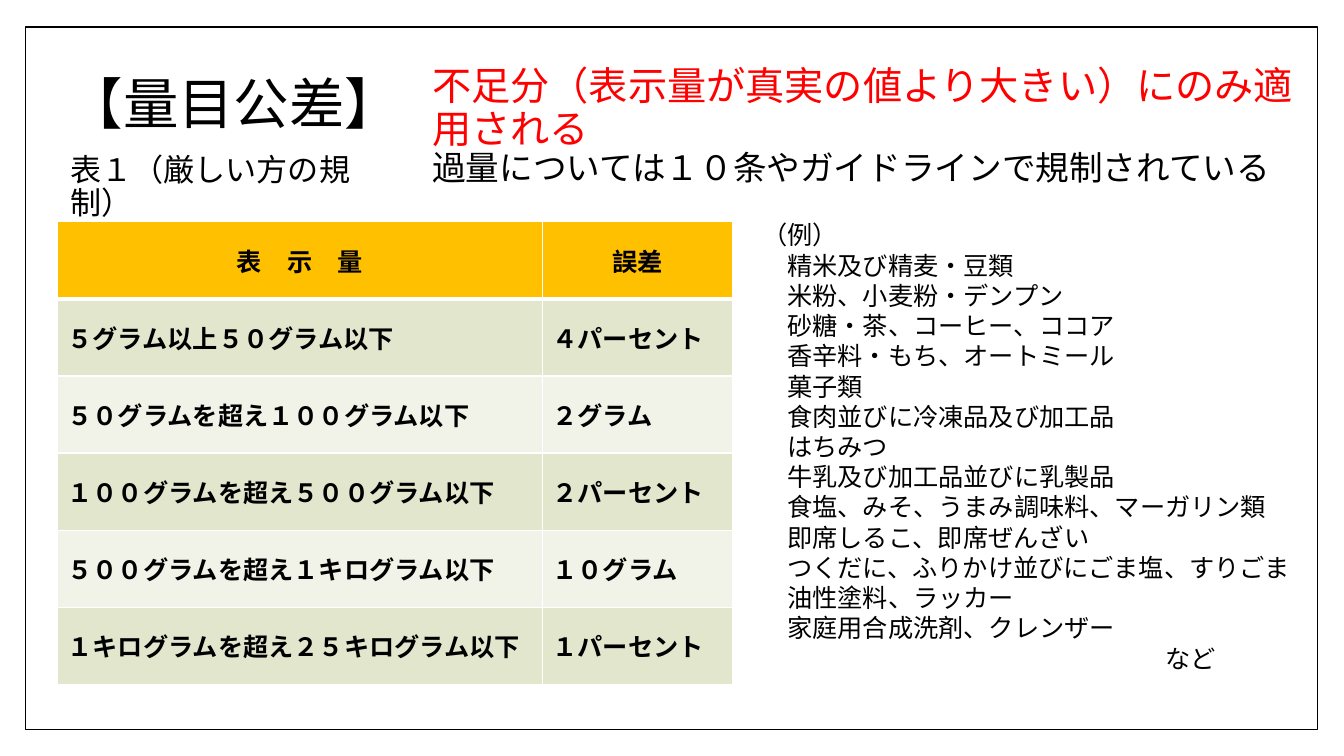
from dataclasses import dataclass

from lxml.etree import SubElement
from pptx import Presentation
from pptx.dml.color import RGBColor
from pptx.enum.shapes import MSO_SHAPE
from pptx.enum.text import MSO_ANCHOR, MSO_AUTO_SIZE, PP_ALIGN
from pptx.oxml.ns import qn
from pptx.util import Inches, Pt


@dataclass(frozen=True)
class Theme:
    font: str = "Calibri"
    black: str = "000000"
    white: str = "FFFFFF"
    red: str = "FF0000"
    gold: str = "FFC000"
    bands: tuple = ("E1E6CD", "F1F3E8")
    title: float = 39.6
    lead: float = 28
    note: float = 24
    label: float = 22.2
    body: float = 18


THEME = Theme()

LIMITS = [
    ("表　示　量", "誤差"),
    ("５グラム以上５０グラム以下", "４パーセント"),
    ("５０グラムを超え１００グラム以下", "２グラム"),
    ("１００グラムを超え５００グラム以下", "２パーセント"),
    ("５００グラムを超え１キログラム以下", "１０グラム"),
    ("１キログラムを超え２５キログラム以下", "１パーセント"),
]

GOODS = [
    "精米及び精麦・豆類",
    "米粉、小麦粉・デンプン",
    "砂糖・茶、コーヒー、ココア",
    "香辛料・もち、オートミール",
    "菓子類",
    "食肉並びに冷凍品及び加工品",
    "はちみつ",
    "牛乳及び加工品並びに乳製品",
    "食塩、みそ、うまみ調味料、マーガリン類",
    "即席しるこ、即席ぜんざい",
    "つくだに、ふりかけ並びにごま塩、すりごま",
    "油性塗料、ラッカー",
    "家庭用合成洗剤、クレンザー",
]


def color(code):
    return RGBColor.from_string(code)


def write(frame, text, size=THEME.body, ink=THEME.black, bold=False,
          align=PP_ALIGN.LEFT, space=None, indent=0):
    """Fill the first paragraph if it is empty, else append one."""
    para = frame.paragraphs[-1]
    if para.runs:
        para = frame.add_paragraph()
    para.alignment = align
    if space:
        para.line_spacing = space
    if indent:
        props = para._p.get_or_add_pPr()
        props.set("marL", str(Inches(indent)))
        props.set("indent", "0")
    run = para.add_run()
    run.text = text
    font = run.font
    font.name, font.size, font.bold = THEME.font, Pt(size), bold
    font.color.rgb = color(ink)


def add_box(slide, left, top, width, height, anchor=MSO_ANCHOR.MIDDLE):
    box = slide.shapes.add_textbox(
        Inches(left), Inches(top), Inches(width), Inches(height))
    frame = box.text_frame
    frame.word_wrap = True
    frame.vertical_anchor = anchor
    return frame


def add_border(slide):
    rect = slide.shapes.add_shape(
        MSO_SHAPE.RECTANGLE, Inches(0.25), Inches(0.27), Inches(12.82), Inches(6.97))
    rect.shadow.inherit = False
    rect.fill.solid()
    rect.fill.fore_color.rgb = color(THEME.white)
    rect.line.color.rgb = color(THEME.black)
    rect.line.width = Pt(1)
    # Send behind the title
    slide.shapes._spTree.insert(2, rect._element)


def set_title(slide, text):
    title = slide.shapes.title
    title.left, title.top = Inches(0.57), Inches(0.64)
    title.width, title.height = Inches(3.61), Inches(0.83)
    frame = title.text_frame
    frame.auto_size = MSO_AUTO_SIZE.NONE
    frame.vertical_anchor = MSO_ANCHOR.MIDDLE
    write(frame, text, size=THEME.title, space=0.9)


def set_edges(cell, top, bottom):
    props = cell._tc.get_or_add_tcPr()
    widths = {"a:lnL": 1, "a:lnR": 1, "a:lnT": top, "a:lnB": bottom}
    for spot, (tag, width) in enumerate(widths.items()):
        line = SubElement(props, qn(tag), w=str(Pt(width)))
        fill = SubElement(line, qn("a:solidFill"))
        SubElement(fill, qn("a:srgbClr"), val=THEME.white)
        props.insert(spot, line)


def add_grid(slide, rows):
    widths = (4.81, 1.89)
    table = slide.shapes.add_table(
        len(rows), len(widths), Inches(0.57), Inches(2.2),
        Inches(sum(widths)), Inches(4.59)).table
    for col, width in zip(table.columns, widths):
        col.width = Inches(width)
    for r, row in enumerate(rows):
        head = r == 0
        for c, text in enumerate(row):
            cell = table.cell(r, c)
            cell.vertical_anchor = MSO_ANCHOR.MIDDLE
            cell.fill.solid()
            cell.fill.fore_color.rgb = color(
                THEME.gold if head else THEME.bands[(r - 1) % 2])
            set_edges(cell, top=3 if r == 1 else 1, bottom=3 if head else 1)
            write(cell.text_frame, text, bold=True,
                  align=PP_ALIGN.CENTER if head else PP_ALIGN.LEFT)


def add_goods(slide, goods):
    frame = add_box(slide, 7.46, 2.13, 5.47, 4.64, anchor=MSO_ANCHOR.TOP)
    write(frame, "（例）")
    for item in goods:
        write(frame, item, indent=0.25)
    write(frame, "など", indent=4)


def main():
    deck = Presentation()
    deck.slide_width, deck.slide_height = Inches(13.33), Inches(7.5)
    slide = deck.slides.add_slide(deck.slide_layouts[5])

    # Border and heading
    add_border(slide)
    set_title(slide, "【量目公差】")
    lead = add_box(slide, 4.19, 0.55, 8.74, 1.43)
    write(lead, "不足分（表示量が真実の値より大きい）にのみ適用される",
          size=THEME.lead, ink=THEME.red, space=0.9)
    write(lead, "過量については１０条やガイドラインで規制されている",
          size=THEME.note, space=0.9)

    # Table of limits with its label
    add_grid(slide, LIMITS)
    label = add_box(slide, 0.6, 1.6, 3.58, 0.53)
    write(label, "表１（厳しい方の規制）", size=THEME.label, space=0.9)

    # Examples
    add_goods(slide, GOODS)
    deck.save("out.pptx")


if __name__ == "__main__":
    main()
